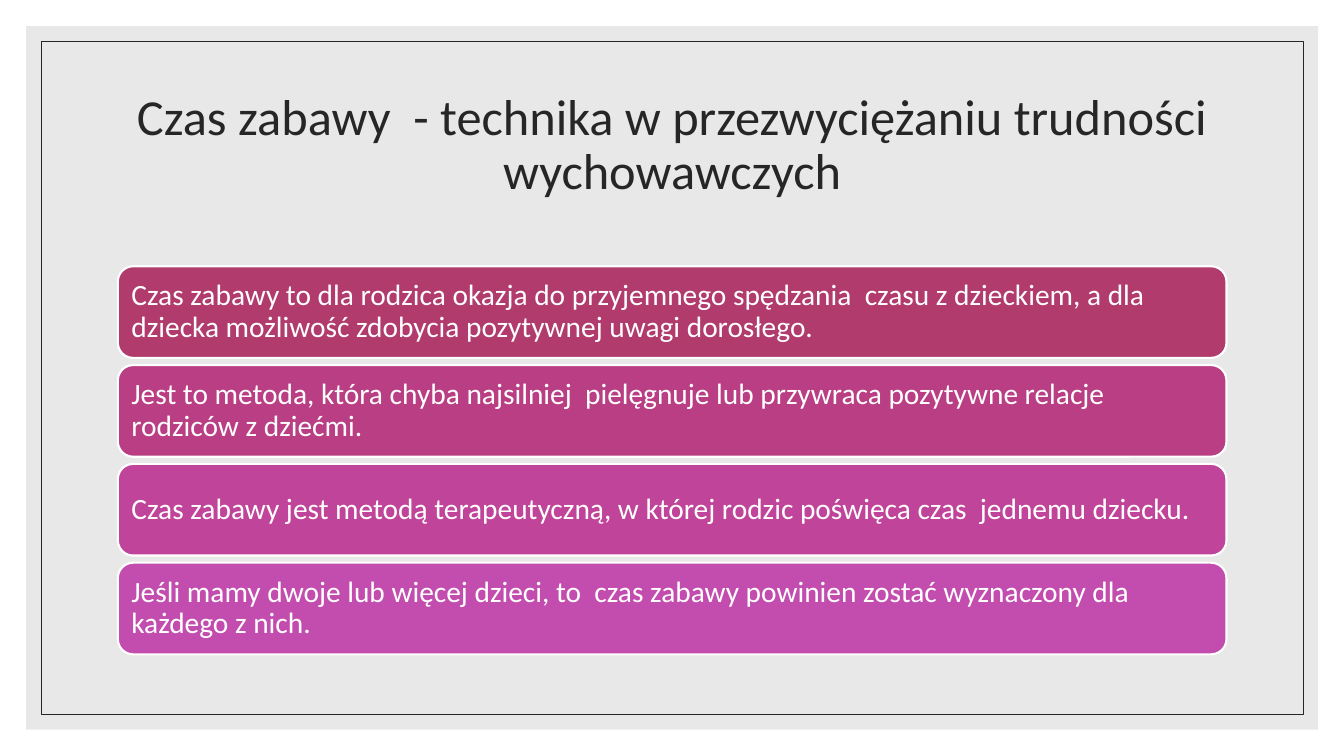
from lxml import etree
from pptx import Presentation
from pptx import util as u
from pptx.dml.color import RGBColor
from pptx.enum import shapes, text
from pptx.oxml.ns import qn

COLORS = {
    "background": "FFFFFF",
    "panel": "D9D9D9",
    "ink": "262626",
    "white": "FFFFFF",
}

TITLE = "Czas zabawy  - technika w przezwyciężaniu trudności wychowawczych"

# Fill and wording of each bar
BARS = [
    ("B13B6C", "Czas zabawy to dla rodzica okazja do przyjemnego spędzania  czasu z dzieckiem, "
               "a dla dziecka możliwość zdobycia pozytywnej uwagi dorosłego."),
    ("BA3E83", "Jest to metoda, która chyba najsilniej  pielęgnuje lub przywraca pozytywne relacje "
               "rodziców z dziećmi."),
    ("C0449A", "Czas zabawy jest metodą terapeutyczną, w której rodzic poświęca czas  jednemu dziecku."),
    ("C34DAF", "Jeśli mamy dwoje lub więcej dzieci, to  czas zabawy powinien zostać wyznaczony "
               "dla każdego z nich."),
]


def set_attrs(obj, values):
    for name, value in values.items():
        setattr(obj, name, value)


class SlideBuilder:
    font = "Calibri"

    def __init__(self, prs):
        self.s = prs.slides.add_slide(prs.slide_layouts[5])
        fill = self.s.background.fill
        fill.solid()
        fill.fore_color.rgb = RGBColor.from_string(COLORS["background"])

    def box(self, kind, left, top, width, height, fill=None, line=None, weight=0.5, opacity=100):
        sp = self.s.shapes.add_shape(kind, *map(u.Cm, (left, top, width, height)))
        sp.shadow.inherit = False
        if fill:
            sp.fill.solid()
            sp.fill.fore_color.rgb = RGBColor.from_string(fill)
            if opacity < 100:
                color = sp.element.spPr.find(qn("a:solidFill"))[0]
                etree.SubElement(color, qn("a:alpha"), val=str(opacity * 1000))
        else:
            sp.fill.background()
        if line:
            sp.line.color.rgb = RGBColor.from_string(line)
            sp.line.width = u.Pt(weight)
        else:
            sp.line.fill.background()
        return sp

    def label(self, sp, words, size, color, align, inset=0.23):
        tf = sp.text_frame
        set_attrs(tf, {
            "word_wrap": True,
            "auto_size": text.MSO_AUTO_SIZE.NONE,
            "vertical_anchor": text.MSO_ANCHOR.MIDDLE,
            **{f"margin_{side}": u.Cm(inset) for side in ("left", "top", "right", "bottom")},
        })
        p = tf.paragraphs[0]
        set_attrs(p, {"alignment": align, "line_spacing": 0.9})
        r = p.add_run()
        r.text = words
        set_attrs(r.font, {"name": self.font, "size": u.Pt(size)})
        r.font.color.rgb = RGBColor.from_string(color)

    def title(self, words, left, top, width, height):
        sp = self.s.shapes.title
        set_attrs(sp, dict(zip(("left", "top", "width", "height"),
                               map(u.Cm, (left, top, width, height)))))
        self.s.shapes.element.append(sp.element)  # bring in front of the panel
        self.label(sp, words, 36, COLORS["ink"], text.PP_ALIGN.CENTER)

    def bar(self, words, fill, left, top, width, height):
        sp = self.box(shapes.MSO_SHAPE.ROUNDED_RECTANGLE, left, top, width, height,
                      fill, COLORS["white"], 1.5)
        self.label(sp, words, 21, COLORS["white"], text.PP_ALIGN.LEFT)


def main():
    prs = Presentation()
    set_attrs(prs, {"slide_width": u.Cm(33.87), "slide_height": u.Cm(19.05)})
    b = SlideBuilder(prs)

    # Grey panel with a thin inner frame
    rect = shapes.MSO_SHAPE.RECTANGLE
    b.box(rect, 0.66, 0.66, 32.56, 17.73, fill=COLORS["panel"], opacity=60)
    b.box(rect, 1.04, 1.04, 31.8, 16.97, line=COLORS["ink"])

    # Title
    left, width = 2.97, 27.94
    b.title(TITLE, left, 1.78, width, 3.81)

    # Stacked bars
    top, height, pitch = 6.71, 2.31, 2.49
    for i, (fill, words) in enumerate(BARS):
        b.bar(words, fill, left, top + i * pitch, width, height)

    prs.save("out.pptx")


if __name__ == "__main__":
    main()
